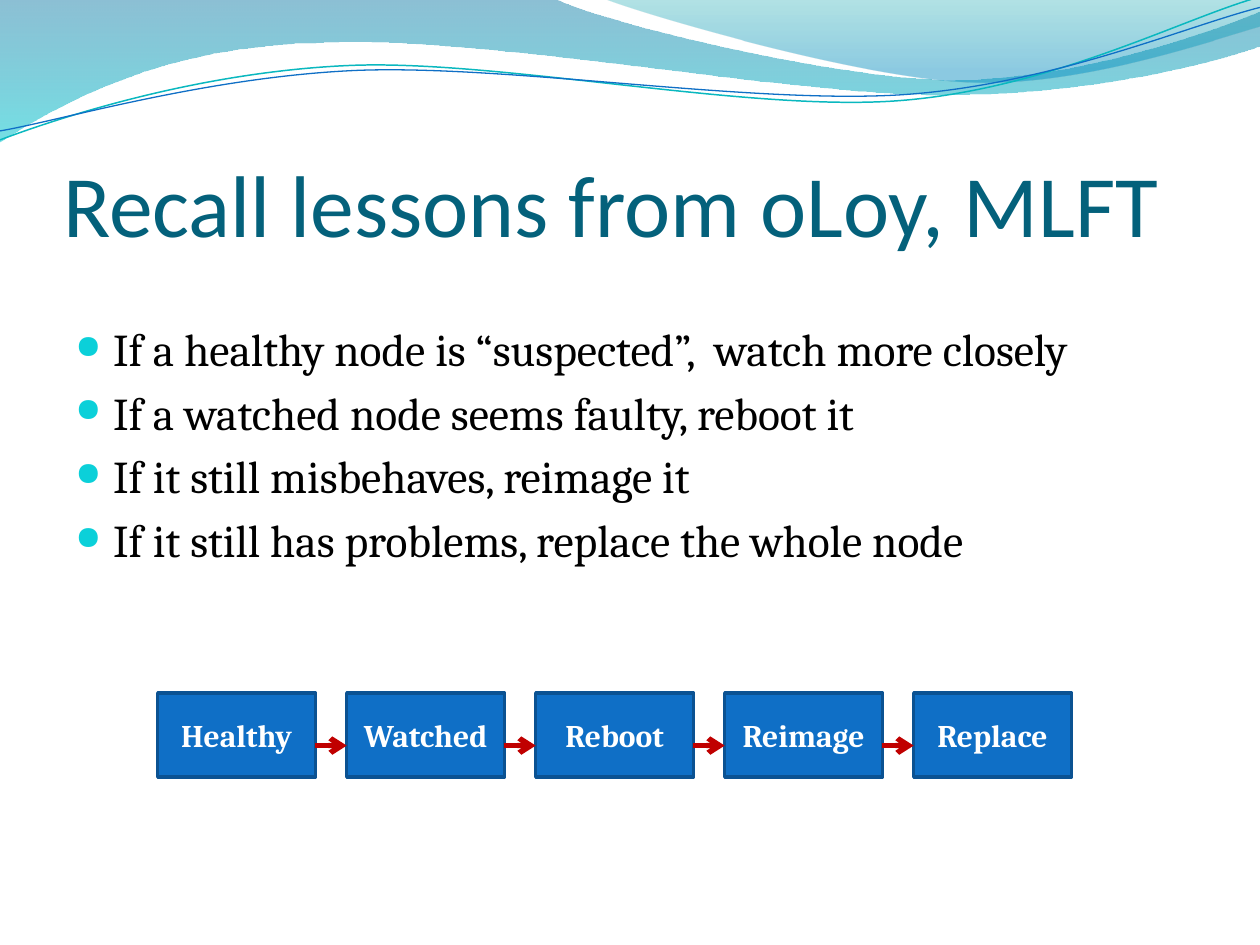
from math import cos, radians, sin
from lxml.etree import SubElement
from pptx import Presentation
from pptx.dml.color import RGBColor
from pptx.enum.shapes import MSO_CONNECTOR as CONN, MSO_SHAPE as SHAPE
from pptx.enum.text import MSO_ANCHOR as ANCHOR, MSO_AUTO_SIZE as FIT, PP_ALIGN as ALIGN
from pptx.oxml.ns import qn
from pptx.util import Cm, Pt

COLORS = {
    "title": "04617B", "text": "000000", "bullet": "0BD0D9",
    "box": "0F6FC6", "edge": "0B5292", "label": "FFFFFF", "arrow": "C00000",
    "deep": "0074A1", "aqua": "00C6CF", "teal": "00A1A9", "sky": "008BBF",
    "swirl": "0AB8BF",
}
BAND = [
    [(0, -0.03)], [(11.18, -0.03)],
    [(12.09, 0.43), (16.87, 1.6), (19.25, 1.6)],
    [(21.67, 1.6), (24.33, 0.66), (25.4, 0.23)],
    [(25.43, 0.91)],
    [(24.97, 1.12), (22.1, 1.93), (18.95, 1.91)],
    [(15.8, 1.91), (9.7, 0.71), (6.53, 0.86)],
    [(3.28, 0.89), (1.17, 2.11), (-0.03, 2.87)],
    [(0, -0.03)],
]
CORNER = [
    [(12.17, -0.03)],
    [(12.93, 0.28), (17.32, 1.57), (19.53, 1.65)],
    [(21.74, 1.75), (24.41, 0.81), (25.4, 0.53)],
    [(25.4, 0)], [(12.17, -0.03)],
]
UPPER_LINE = [
    [(0, 2.82)],
    [(1.22, 2.36), (4.01, 1.45), (7.04, 1.32)],
    [(10.03, 1.19), (15.06, 2.26), (18.11, 2.03)],
    [(21.16, 1.8), (23.83, 0.38), (25.35, -0.05)],
]
LOWER_LINE = [
    [(0, 2.64)],
    [(1.19, 2.44), (4.17, 1.55), (7.19, 1.42)],
    [(10.24, 1.3), (15.16, 2.11), (18.21, 1.91)],
    [(21.23, 1.7), (23.9, 0.53), (25.4, 0.15)],
]
LESSONS = [
    "If a healthy node is “suspected”,  watch more closely",
    "If a watched node seems faulty, reboot it",
    "If it still misbehaves, reimage it",
    "If it still has problems, replace the whole node",
]
STATES = ["Healthy", "Watched", "Reboot", "Reimage", "Replace"]


def turn(segments, center, degrees):
    a, (cx, cy) = radians(degrees), center
    return [[(cx + (x - cx) * cos(a) - (y - cy) * sin(a),
              cy + (x - cx) * sin(a) + (y - cy) * cos(a)) for x, y in seg]
            for seg in segments]


class Deck:
    head_font = "Calibri"
    body_font = "Cambria"

    def __init__(self, prs):
        self.s = prs.slides.add_slide(prs.slide_layouts[5])

    def color(self, name):
        return RGBColor.from_string(COLORS[name])

    def run(self, p, text, size, color, font, bold=False):
        r = p.add_run()
        r.text = text
        r.font.size, r.font.name, r.font.bold = Pt(size), font, bold
        r.font.color.rgb = self.color(color)

    def line(self, sp, color, width):
        sp.line.color.rgb = self.color(color)
        sp.line.width = Pt(width)

    def outline(self, segments, closed):
        points = [(Cm(x), Cm(y)) for seg in segments for x, y in seg]
        builder = self.s.shapes.build_freeform(*points[0])
        builder.add_line_segments(points[1:], close=closed)
        sp = builder.convert_to_shape()
        sp.shadow.inherit = False
        steps = iter(list(sp._element.iter(qn("a:lnTo"))))
        for seg in segments[1:]:
            first = next(steps)
            if len(seg) == 3:
                first.tag = qn("a:cubicBezTo")
                for _ in range(2):
                    step = next(steps)
                    first.append(step[0])
                    step.getparent().remove(step)
        return sp

    def wave(self, segments, stops):
        sp = self.outline(segments, True)
        sp.line.fill.background()
        sp.fill.gradient()
        sp.fill.gradient_angle = 270
        nodes = sp._element.spPr.iter(qn("a:gs"))
        for stop, node, (pos, color, alpha) in zip(sp.fill.gradient_stops, nodes, stops):
            stop.position = pos
            stop.color.rgb = self.color(color)
            SubElement(node[0], qn("a:alpha"), val=str(alpha * 1000))

    def swirl(self, segments, center, color, width, tilt=2.7):
        sp = self.outline(turn(segments, center, tilt), False)
        sp.rotation = -tilt
        sp.fill.background()
        self.line(sp, color, width)

    def title(self, text, left, top, width, height):
        sp = self.s.shapes.title
        sp.left, sp.top, sp.width, sp.height = Cm(left), Cm(top), Cm(width), Cm(height)
        tf = sp.text_frame
        tf.auto_size, tf.vertical_anchor = FIT.NONE, ANCHOR.BOTTOM
        tf.margin_left = tf.margin_right = tf.margin_bottom = 0
        tf.margin_top = Cm(0.13)
        p = tf.paragraphs[0]
        p.alignment = ALIGN.LEFT
        self.run(p, text, 50, "title", self.head_font)

    def bullets(self, items, left, top, width, height):
        tf = self.s.shapes.add_textbox(Cm(left), Cm(top), Cm(width), Cm(height)).text_frame
        tf.word_wrap = True
        for i, item in enumerate(items):
            p = tf.paragraphs[0] if i == 0 else tf.add_paragraph()
            pPr = p._p.get_or_add_pPr()
            pPr.set("marL", str(Cm(0.76)))
            pPr.set("indent", str(Cm(-0.76)))
            SubElement(SubElement(pPr, qn("a:spcBef")), qn("a:spcPct"), val="20000")
            tint = SubElement(pPr, qn("a:buClr"))
            SubElement(tint, qn("a:srgbClr"), val=COLORS["bullet"])
            SubElement(pPr, qn("a:buSzPct"), val="72000")
            SubElement(pPr, qn("a:buChar"), char="●")
            self.run(p, item, 26, "text", self.body_font)

    def box(self, text, left, top, width, height):
        sp = self.s.shapes.add_shape(SHAPE.RECTANGLE, Cm(left), Cm(top), Cm(width), Cm(height))
        sp.shadow.inherit = False
        sp.fill.solid()
        sp.fill.fore_color.rgb = self.color("box")
        self.line(sp, "edge", 2)
        tf = sp.text_frame
        tf.word_wrap, tf.vertical_anchor = True, ANCHOR.MIDDLE
        p = tf.paragraphs[0]
        p.alignment = ALIGN.CENTER
        self.run(p, text, 18, "label", self.body_font, True)

    def arrow(self, x1, x2, y):
        cx = self.s.shapes.add_connector(CONN.STRAIGHT, Cm(x1), Cm(y), Cm(x2), Cm(y))
        self.line(cx, "arrow", 3)
        SubElement(cx.line._get_or_add_ln(), qn("a:tailEnd"), type="arrow")
        SubElement(cx._element.spPr, qn("a:effectLst"))


def main():
    prs = Presentation()
    prs.slide_width, prs.slide_height = Cm(25.4), Cm(19.05)
    deck = Deck(prs)
    deck.wave(BAND, [(0, "deep", 45), (1, "aqua", 55)])
    deck.wave(CORNER, [(0, "teal", 30), (0.8, "sky", 45)])
    deck.swirl(UPPER_LINE, (12.67, 1.46), "swirl", 0.85)
    deck.swirl(LOWER_LINE, (12.69, 1.5), "box", 0.75)
    deck.title("Recall lessons from oLoy, MLFT", 1.27, 1.96, 22.86, 3.18)
    deck.bullets(LESSONS, 1.27, 6.35, 22.86, 11.23)

    left, pitch, width = 3.18, 3.81, 3.18
    for i, state in enumerate(STATES):
        deck.box(state, left + i * pitch, 13.97, width, 1.7)
    for i in range(len(STATES) - 1):
        x = left + i * pitch
        deck.arrow(x + width, x + pitch, 15.03)
    prs.save("out.pptx")


if __name__ == "__main__":
    main()
